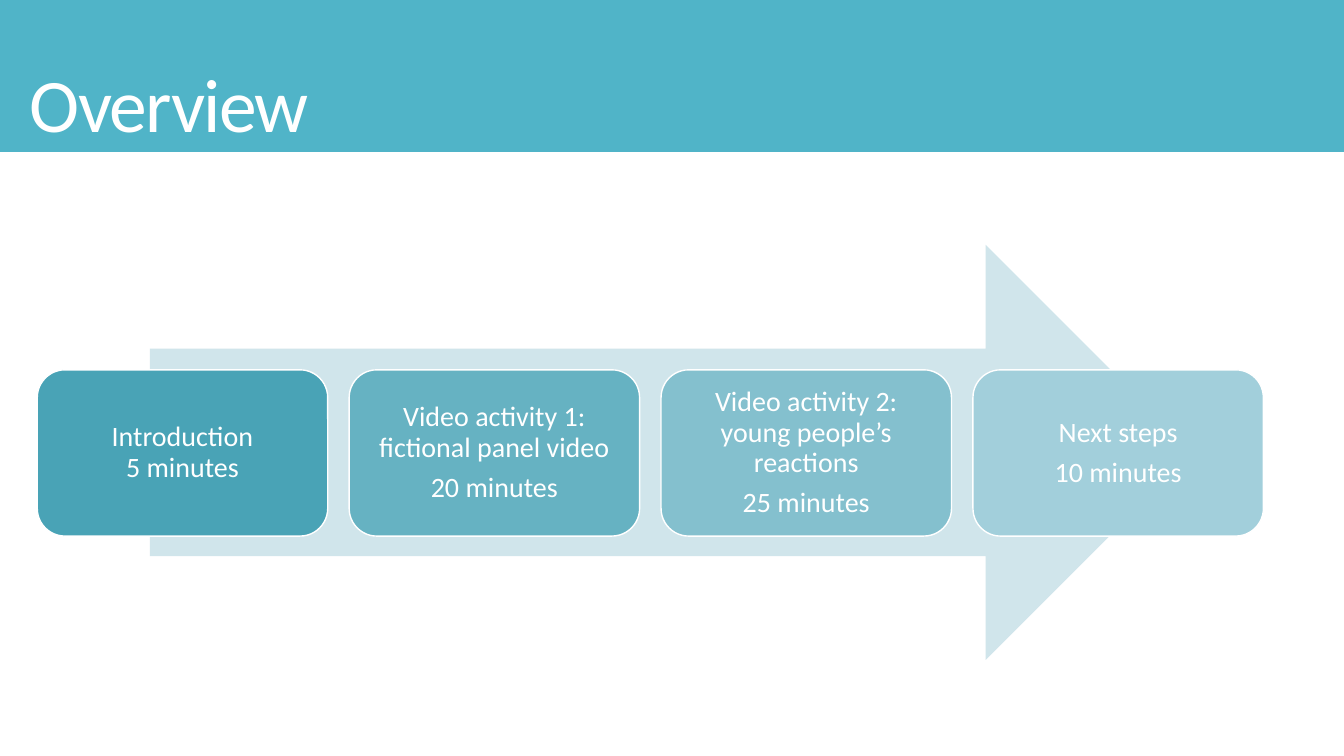
from typing import NamedTuple

from pptx import Presentation
from pptx import util as u
from pptx.dml.color import RGBColor
from pptx.enum import shapes, text

FONT = "Calibri"
WHITE = "FFFFFF"
WIDE, HIGH = 33.87, 19.05


class Box(NamedTuple):
    left: float
    top: float
    width: float
    height: float


class Step(NamedTuple):
    fill: str
    lines: tuple[str, ...]


# The agenda; a vertical tab is a line break within a paragraph
STEPS = (
    Step("49A3B6", ("Introduction\v5 minutes",)),
    Step("66B2C2", ("Video activity 1: fictional panel video", "20 minutes")),
    Step("84C0CE", ("Video activity 2: young people’s reactions", "25 minutes")),
    Step("A2CFDB", ("Next steps", "10 minutes")),
)
FIRST = Box(0.94, 9.32, 7.32, 4.19)
PITCH = 7.86


def tint(code: str) -> RGBColor:
    return RGBColor.from_string(code)


def place(box: Box) -> list[u.Cm]:
    return [u.Cm(side) for side in box]


def add_form(slide, kind, box: Box, fill: str, line: str | None = None):
    form = slide.shapes.add_shape(kind, *place(box))
    form.shadow.inherit = False
    form.fill.solid()
    form.fill.fore_color.rgb = tint(fill)
    if line:
        form.line.color.rgb = tint(line)
        form.line.width = u.Pt(1)
    else:
        form.line.fill.background()
    return form


def add_run(para, words: str, size: int):
    """Add white text, with a line break at each vertical tab."""
    for row, part in enumerate(words.split("\v")):
        if row:
            para.add_line_break()
        run = para.add_run()
        run.text = part
        run.font.name = FONT
        run.font.size = u.Pt(size)
        run.font.color.rgb = tint(WHITE)
    return run


def add_step(slide, step: Step, box: Box) -> None:
    card = add_form(slide, shapes.MSO_SHAPE.ROUNDED_RECTANGLE, box, step.fill, WHITE)
    frame = card.text_frame
    frame.word_wrap = True
    frame.vertical_anchor = text.MSO_ANCHOR.MIDDLE
    frame.margin_left = frame.margin_right = u.Cm(0.4)
    frame.margin_top = frame.margin_bottom = u.Cm(0.4)
    for row, words in enumerate(step.lines):
        para = frame.add_paragraph() if row else frame.paragraphs[0]
        para.alignment = text.PP_ALIGN.CENTER
        para.line_spacing = 0.9
        para.space_before = u.Pt(7 if row else 0)
        add_run(para, words, 20)


def add_title(slide, words: str, box: Box) -> None:
    frame = slide.shapes.add_textbox(*place(box)).text_frame
    frame.word_wrap = True
    frame.vertical_anchor = text.MSO_ANCHOR.MIDDLE
    para = frame.paragraphs[0]
    para.line_spacing = 0.85
    run = add_run(para, words, 54)
    run.font._element.set("spc", "-120")


def main() -> None:
    deck = Presentation()
    deck.slide_width, deck.slide_height = u.Cm(WIDE), u.Cm(HIGH)
    slide = deck.slides.add_slide(deck.slide_layouts[6])

    # Arrow behind the steps
    add_form(slide, shapes.MSO_SHAPE.RIGHT_ARROW, Box(3.78, 6.17, 26.29, 10.46), "D0E5EB")

    # Steps at equal pitch
    for col, step in enumerate(STEPS):
        add_step(slide, step, FIRST._replace(left=FIRST.left + col * PITCH))

    # Title band
    add_form(slide, shapes.MSO_SHAPE.RECTANGLE, Box(0, 0, WIDE, 3.83), "50B4C8")
    add_title(slide, "Overview", Box(0.5, 0.46, 29.92, 4.6))

    deck.save("out.pptx")


if __name__ == "__main__":
    main()
